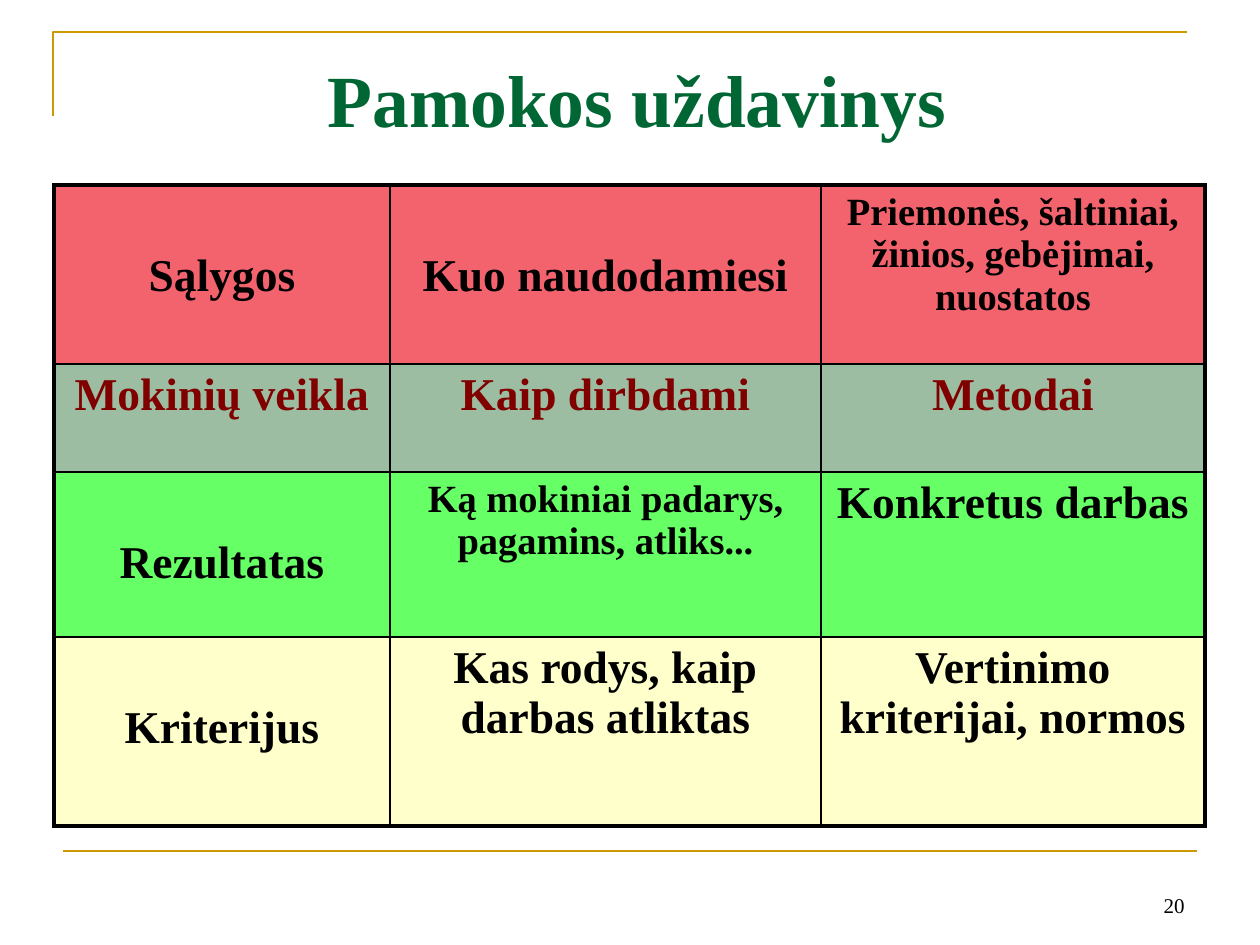
"""Build the lesson objective slide with its table of conditions, activity, result and criterion."""
import pptx
import pptx.dml.color
import pptx.enum.text
import pptx.oxml
import pptx.oxml.ns
import pptx.util

PX = 914400 / 126
COLORS = {"gold": "CC9900", "green": "006633", "black": "000000", "maroon": "800000",
          "red": "F3636D", "sage": "9DBDA2", "lime": "66FF66", "cream": "FFFFCC"}
ALIGN = pptx.enum.text.PP_ALIGN
ANCHOR = pptx.enum.text.MSO_ANCHOR


def px(*lengths):
    return [pptx.util.Emu(round(n * PX)) for n in lengths]


def write(tf, text, size, color, bold=True, align=ALIGN.CENTER):
    p = tf.paragraphs[0]
    p.alignment = align
    r = p.add_run()
    r.text = text
    for name, value in {"name": "Times New Roman", "size": pptx.util.Pt(size), "bold": bold}.items():
        setattr(r.font, name, value)
    r.font.color.rgb = pptx.dml.color.RGBColor.from_string(COLORS[color])


prs = pptx.Presentation()
prs.slide_width, prs.slide_height = px(1260, 945)
slide = prs.slides.add_slide(prs.slide_layouts[5])
gold = pptx.dml.color.RGBColor.from_string(COLORS["gold"])

fb = slide.shapes.build_freeform(53, 116, scale=PX)
fb.add_line_segments([(53, 32), (1187, 32)], close=False)
corner = fb.convert_to_shape()
corner.shadow.inherit = False
corner.fill.background()
rule = slide.shapes.add_connector(pptx.enum.shapes.MSO_CONNECTOR.STRAIGHT, *px(63, 851, 1197, 851))
rule._element.spPr.append(pptx.oxml.parse_xml(
    f'<a:effectLst {pptx.oxml.ns.nsdecls("a")}/>'))
for sp in (corner, rule):
    sp.line.color.rgb = gold
    sp.line.width = pptx.util.Pt(1.5)

title = slide.shapes.title
title.left, title.top, title.width, title.height = px(77, 38, 1120, 96)
number = slide.shapes.add_textbox(*px(903, 861, 294, 63))
frames = [(title.text_frame, ANCHOR.TOP, 16), (number.text_frame, ANCHOR.BOTTOM, 6)]
for tf, anchor, margin in frames:
    frame_format = {"word_wrap": True, "auto_size": pptx.enum.text.MSO_AUTO_SIZE.NONE,
                    "vertical_anchor": anchor, "margin_top": px(margin)[0]}
    for name, value in frame_format.items():
        setattr(tf, name, value)
write(title.text_frame, "Pamokos uždavinys", 42, "green")
write(number.text_frame, "20", 12, "black", bold=False, align=ALIGN.RIGHT)

col_widths = [336, 431, 384]
row_heights = [179, 108, 165, 189]
rows = [
    ("red", "black", [("Sąlygos", 26, 66), ("Kuo naudodamiesi", 26, 66),
                      ("Priemonės, šaltiniai, žinios, gebėjimai, nuostatos", 22, 6)]),
    ("sage", "maroon", [("Mokinių veikla", 26, 6), ("Kaip dirbdami", 26, 6), ("Metodai", 26, 6)]),
    ("lime", "black", [("Rezultatas", 26, 66), ("Ką mokiniai padarys, pagamins, atliks...", 22, 6),
                       ("Konkretus darbas", 26, 6)]),
    ("cream", "black", [("Kriterijus", 26, 66), ("Kas rodys, kaip darbas atliktas", 26, 6),
                        ("Vertinimo kriterijai, normos", 26, 6)]),
]
frame = slide.shapes.add_table(len(rows), len(col_widths),
                               *px(54, 185, sum(col_widths), sum(row_heights)))
table = frame.table
for col, width in zip(table.columns, px(*col_widths)):
    col.width = width
for row, height in zip(table.rows, px(*row_heights)):
    row.height = height

for i, (fill, color, cells) in enumerate(rows):
    for j, (text, size, margin) in enumerate(cells):
        cell = table.cell(i, j)
        cell.margin_top = px(margin)[0]
        write(cell.text_frame, text, size, color)
        outer = {"L": j == 0, "R": j == len(cells) - 1, "T": i == 0, "B": i == len(rows) - 1}
        for side, is_outer in outer.items():
            width = pptx.util.Pt(2.25 if is_outer else 1)
            cell._tc.get_or_add_tcPr().append(pptx.oxml.parse_xml(
                f'<a:ln{side} {pptx.oxml.ns.nsdecls("a")} w="{width}"><a:solidFill>'
                f'<a:srgbClr val="{COLORS["black"]}"/></a:solidFill></a:ln{side}>'))
        cell.fill.solid()
        cell.fill.fore_color.rgb = pptx.dml.color.RGBColor.from_string(COLORS[fill])

prs.save("out.pptx")
